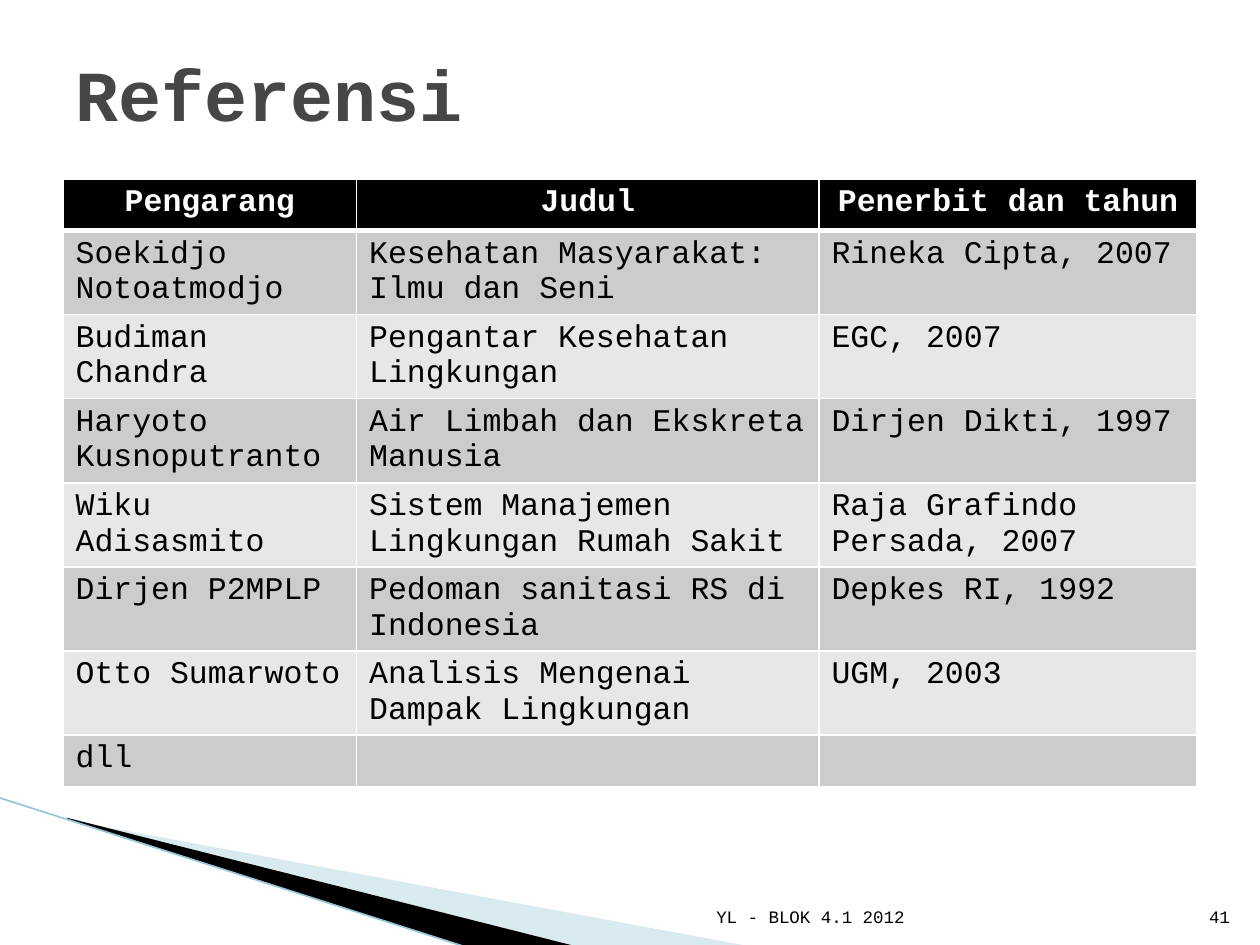
from lxml.etree import SubElement
from pptx import Presentation
from pptx.dml.color import RGBColor
from pptx.enum.shapes import MSO_CONNECTOR
from pptx.enum.text import MSO_ANCHOR as ANCHOR, PP_ALIGN as ALIGN
from pptx.oxml.ns import qn
from pptx.util import Inches, Pt

COLORS = {
    "title": "464646", "black": "000000", "white": "FFFFFF",
    "dark_band": "CCCCCC", "light_band": "E7E7E7",
    "wedge": "A0CBDC", "line": "97C5D8",
}


def rgb(name):
    return RGBColor.from_string(COLORS[name])


def write(tf, text, size=18, color="black", bold=False, align=ALIGN.LEFT):
    p = tf.paragraphs[0]
    p.alignment = align
    p.font.size = Pt(size)
    r = p.add_run()
    r.text = text
    r.font.name = "Courier New"
    r.font.size = Pt(size)
    r.font.bold = bold
    r.font.color.rgb = rgb(color)


prs = Presentation()
prs.slide_width, prs.slide_height = Inches(10), Inches(7.5)
s = prs.slides.add_slide(prs.slide_layouts[5])

# Corner wedges: points, colour, opacity in percent
wedges = [
    ([(0.55, 6.51), (5.95, 7.51), (4.56, 7.51), (0.55, 6.5)], "wedge", 40),
    ([(0.53, 6.49), (4.57, 7.51), (3.72, 7.52), (0.54, 6.5)], "black", 100),
]
for points, color, opacity in wedges:
    start, *rest = [(Inches(x), Inches(y)) for x, y in points]
    builder = s.shapes.build_freeform(*start)
    builder.add_line_segments(rest, close=True)
    sp = builder.convert_to_shape()
    sp.shadow.inherit = False
    sp.fill.solid()
    sp.fill.fore_color.rgb = rgb(color)
    sp.line.fill.background()
    if opacity < 100:
        clr = sp.fill._xPr.find(qn("a:solidFill"))[0]
        SubElement(clr, qn("a:alpha"), val=str(opacity * 1000))

# Corner line
line = s.shapes.add_connector(MSO_CONNECTOR.STRAIGHT, Inches(-0.01), Inches(6.33),
                              Inches(3.71), Inches(7.52))
line.line.color.rgb = rgb("line")
line.line.width = Pt(0.95)
SubElement(line._element.spPr, qn("a:effectLst"))

# Title
title = s.shapes.title
title.left, title.top = Inches(0.5), Inches(0.3)
title.width, title.height = Inches(9), Inches(0.87)
title.text_frame.vertical_anchor = ANCHOR.MIDDLE
write(title.text_frame, "Referensi", size=41, color="title", bold=True)

# Reference table
rows = [
    ("Pengarang", "Judul", "Penerbit dan tahun"),
    ("Soekidjo Notoatmodjo", "Kesehatan Masyarakat: Ilmu dan Seni", "Rineka Cipta, 2007"),
    ("Budiman Chandra", "Pengantar Kesehatan Lingkungan", "EGC, 2007"),
    ("Haryoto Kusnoputranto", "Air Limbah dan Ekskreta Manusia", "Dirjen Dikti, 1997"),
    ("Wiku Adisasmito", "Sistem Manajemen Lingkungan Rumah Sakit",
     "Raja Grafindo Persada, 2007"),
    ("Dirjen P2MPLP", "Pedoman sanitasi RS di Indonesia", "Depkes RI, 1992"),
    ("Otto Sumarwoto", "Analisis Mengenai Dampak Lingkungan", "UGM, 2003"),
    ("dll", "", ""),
]
table = s.shapes.add_table(len(rows), 3, Inches(0.5), Inches(1.42),
                           Inches(9), Inches(0.41 * len(rows))).table
for column, width in zip(table.columns, (2.33, 3.67, 3)):
    column.width = Inches(width)
for i, row in enumerate(rows):
    header = i == 0
    band = "black" if header else "dark_band" if i % 2 else "light_band"
    for j, text in enumerate(row):
        cell = table.cell(i, j)
        if text:
            write(cell.text_frame, text, color="white" if header else "black",
                  bold=header, align=ALIGN.CENTER if header else ALIGN.LEFT)
        else:
            cell.text_frame.paragraphs[0].font.size = Pt(18)
        # Borders go before the fill in the cell properties
        tc_pr = cell._tc.get_or_add_tcPr()
        for side in ("lnL", "lnR", "lnT", "lnB"):
            thick = (header and side == "lnB") or (i == 1 and side == "lnT")
            ln = SubElement(tc_pr, qn(f"a:{side}"), w=str(Pt(3 if thick else 1)))
            fill = SubElement(ln, qn("a:solidFill"))
            SubElement(fill, qn("a:srgbClr"), val=COLORS["white"])
        cell.fill.solid()
        cell.fill.fore_color.rgb = rgb(band)

# Footer and slide number
for text, left, width in [("YL - BLOK 4.1 2012 ", 4.79, 2.57), ("41", 9.46, 0.4)]:
    tf = s.shapes.add_textbox(Inches(left), Inches(7.01),
                              Inches(width), Inches(0.4)).text_frame
    tf.word_wrap = True
    tf.vertical_anchor = ANCHOR.BOTTOM
    write(tf, text, size=10, align=ALIGN.RIGHT)

prs.save("out.pptx")
